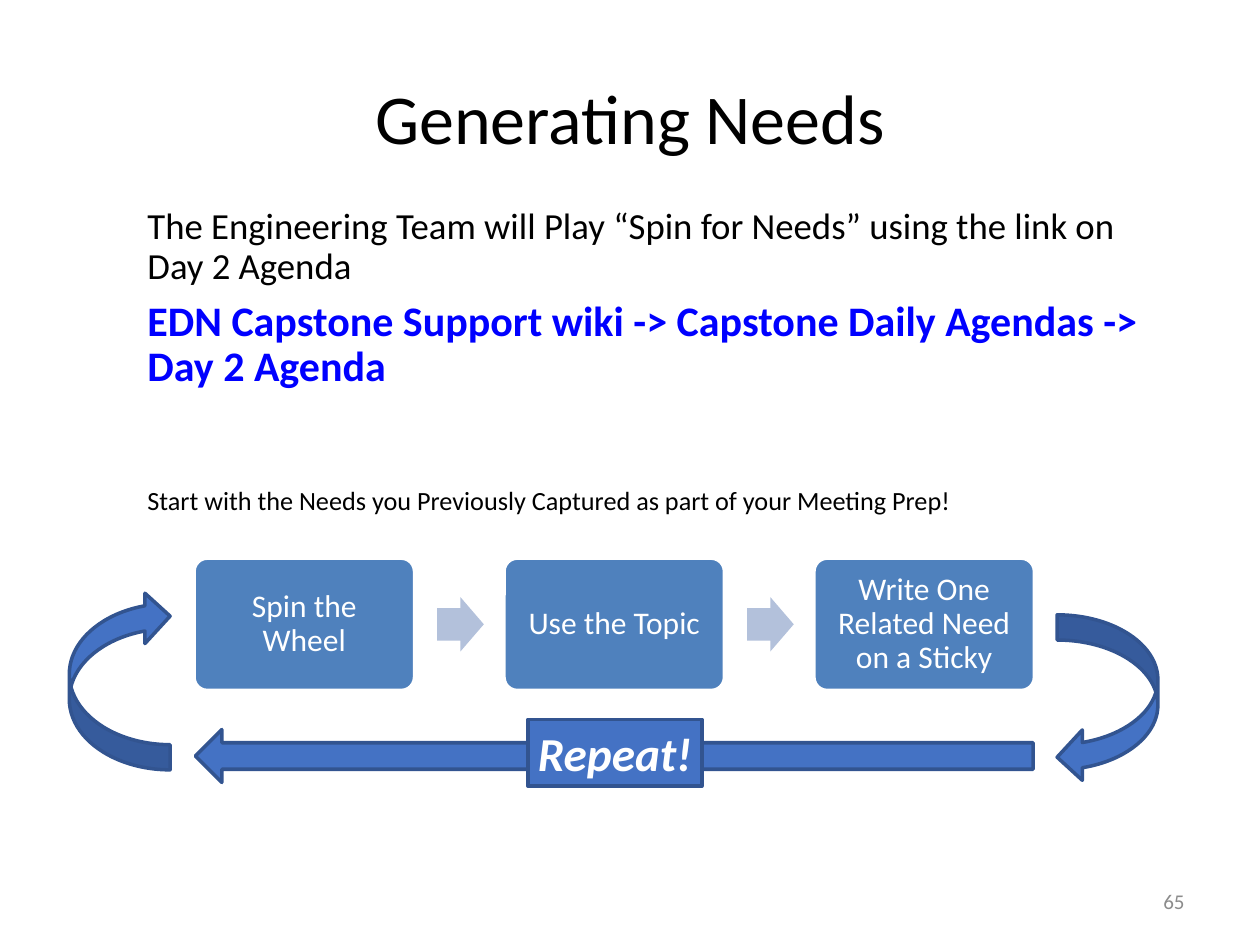
from pptx import Presentation
from pptx.dml.color import RGBColor
from pptx.enum.shapes import MSO_SHAPE
from pptx.enum.text import MSO_ANCHOR, PP_ALIGN
from pptx.util import Inches, Pt

ROUND = MSO_SHAPE.ROUNDED_RECTANGLE
RECT = MSO_SHAPE.RECTANGLE
ARROW = MSO_SHAPE.RIGHT_ARROW
CURVE = MSO_SHAPE.CURVED_LEFT_ARROW
LEFT, CENTER, RIGHT = PP_ALIGN.LEFT, PP_ALIGN.CENTER, PP_ALIGN.RIGHT
TOP, MIDDLE = MSO_ANCHOR.TOP, MSO_ANCHOR.MIDDLE


def color(code):
    """Turn a hex string into a colour."""
    return RGBColor.from_string(code)


class Deck:
    """Hold the style and the current slide."""

    font = "Calibri"
    black, white, gray, link = "000000", "FFFFFF", "8C8C8C", "0000FF"
    step, pale, blue, edge = "4F81BD", "B3C1DB", "4472C4", "325490"

    def __init__(self):
        self.show = Presentation()
        self.show.slide_width = Inches(10)
        self.show.slide_height = Inches(7.5)
        self.slide = self.show.slides.add_slide(self.show.slide_layouts[5])

    def add_run(self, para, text, size, code, align=LEFT, space=None, bold=False, slant=False):
        para.alignment = align
        if space:
            para.line_spacing = space
        run = para.add_run()
        run.text = text
        font = run.font
        font.name, font.size = self.font, Pt(size)
        font.bold, font.italic = bold, slant
        font.color.rgb = color(code)

    def title(self, box, text):
        shape = self.slide.shapes.title
        shape.left, shape.top, shape.width, shape.height = map(Inches, box)
        shape.text_frame.vertical_anchor = MIDDLE
        self.add_run(shape.text_frame.paragraphs[0], text, 40, self.black, CENTER, 0.9)

    def text(self, box, anchor=TOP, indent=0.1):
        frame = self.slide.shapes.add_textbox(*map(Inches, box)).text_frame
        frame.word_wrap = True
        frame.vertical_anchor = anchor
        frame.margin_left = Inches(indent)
        return frame

    def shape(self, kind, box, fill, line=None, adjust=(), turn=0):
        shape = self.slide.shapes.add_shape(kind, *map(Inches, box))
        shape.shadow.inherit = False
        shape.rotation = turn
        for i, value in enumerate(adjust):
            shape.adjustments[i] = value
        shape.fill.solid()
        shape.fill.fore_color.rgb = color(fill)
        if line:
            shape.line.color.rgb = color(line)
            shape.line.width = Pt(2)
        else:
            shape.line.fill.background()
        return shape

    def label(self, shape, text, size, space=None, wrap=True, **style):
        frame = shape.text_frame
        frame.word_wrap = wrap
        frame.vertical_anchor = MIDDLE
        self.add_run(frame.paragraphs[0], text, size, self.white, CENTER, space, **style)


def main():
    """Build the slide and save it."""
    deck = Deck()
    deck.title((0.69, 0.42, 8.62, 1.09), "Generating Needs")

    steps = ["Spin the Wheel", "Use the Topic", "Write One Related Need on a Sticky"]
    left, pitch = 1.54, 2.46
    for i, step in enumerate(steps):
        x = left + i * pitch
        if i:
            deck.shape(ARROW, (x - 0.53, 4.74, 0.37, 0.43), deck.pale, adjust=(0.6, 0.5))
        card = deck.shape(ROUND, (x, 4.43, 1.75, 1.05), deck.step, deck.white, (0.1,))
        deck.label(card, step, 18, 0.9)

    bend = (0.25, 0.5, 0.25)
    deck.shape(ARROW, (1.55, 5.79, 6.65, 0.42), deck.blue, deck.edge, turn=180)
    deck.shape(CURVE, (8.39, 4.88, 0.8, 1.33), deck.blue, deck.edge, bend)
    deck.shape(CURVE, (0.55, 4.69, 0.8, 1.42), deck.blue, deck.edge, bend, 180)
    badge = deck.shape(RECT, (4.19, 5.71, 1.38, 0.53), deck.blue, deck.edge)
    deck.label(badge, "Repeat!", 27, wrap=False, bold=True, slant=True)

    lines = [
        ("The Engineering Team will Play “Spin for Needs” using the link on Day 2 Agenda",
         21, deck.black, False, 7.5),
        ("EDN Capstone Support wiki -> Capstone Daily Agendas -> Day 2 Agenda",
         24, deck.link, True, 7.5),
        ("Start with the Needs you Previously Captured as part of your Meeting Prep!",
         15, deck.black, False, 55.5),
    ]
    body = deck.text((0.69, 1.6, 8.62, 3.57), indent=0.48)
    for i, (text, size, code, bold, gap) in enumerate(lines):
        para = body.add_paragraph() if i else body.paragraphs[0]
        para.space_before = Pt(gap)
        deck.add_run(para, text, size, code, space=0.9, bold=bold)

    page = deck.text((7.17, 6.95, 2.33, 0.4), MIDDLE)
    deck.add_run(page.paragraphs[0], "65", 12, deck.gray, RIGHT)
    deck.show.save("out.pptx")


if __name__ == "__main__":
    main()
